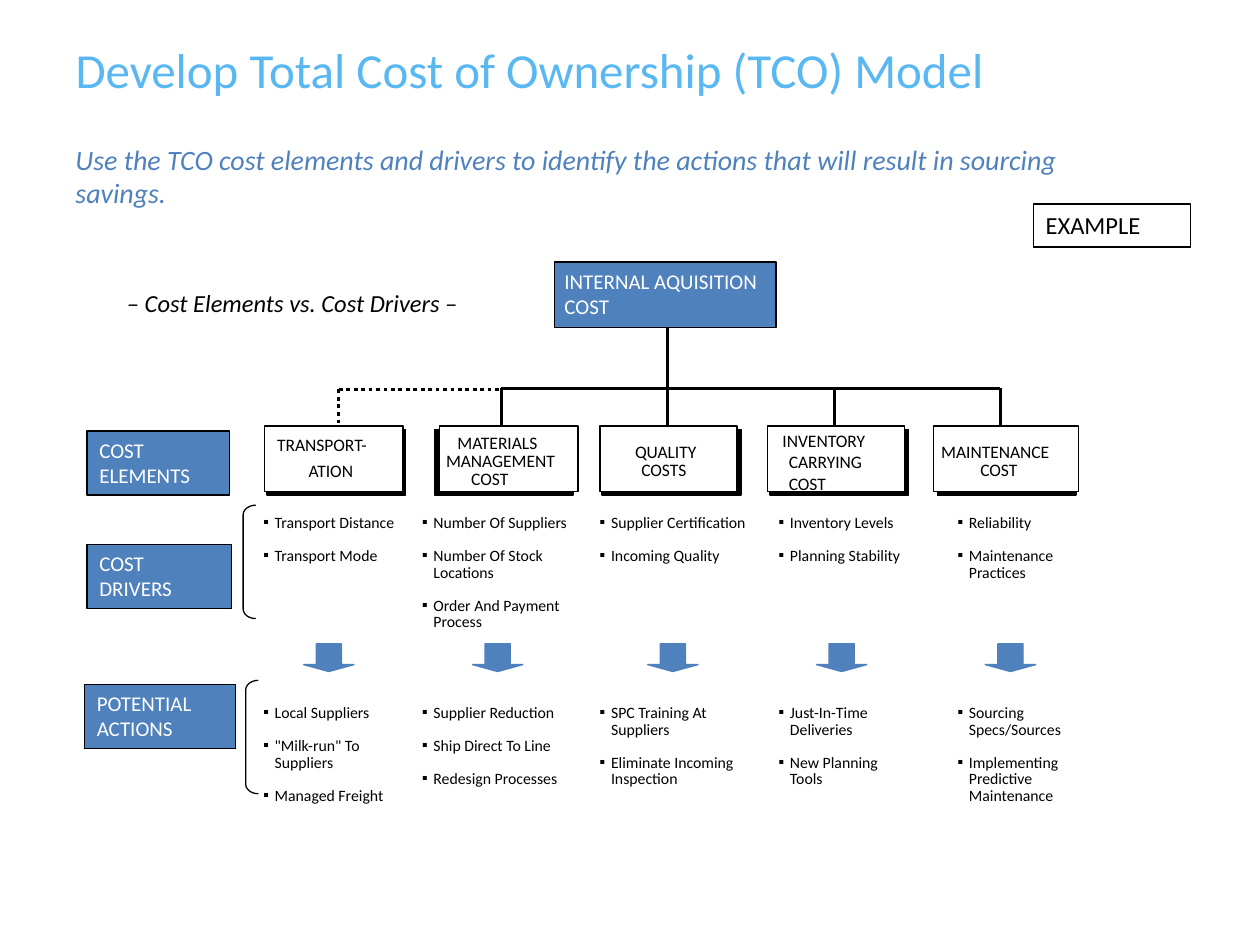
from dataclasses import dataclass
from lxml import etree
from pptx import Presentation
from pptx.dml.color import RGBColor
from pptx.enum.shapes import MSO_CONNECTOR, MSO_SHAPE
from pptx.enum.text import MSO_ANCHOR, MSO_AUTO_SIZE, PP_ALIGN
from pptx.oxml.ns import qn
from pptx.util import Inches, Pt

FONT = "Calibri"
COLORS = {"title": "59B7F2", "blue": "4F81BD", "black": "000000", "white": "FFFFFF"}


@dataclass
class CostElement:
    heading: list        # (line, indent in inches)
    heading_top: float   # top inset in inches
    heading_pitch: float  # line spacing in points
    left: float
    width: float
    list_left: float
    arrow_left: float
    drivers: list
    actions: list


ELEMENTS = [
    CostElement([("TRANSPORT-", 0.1), ("ATION", 0.35)], 0.02, 15.1,
                2.10, 1.10, 2.09, 2.41,
                ["Transport Distance", "Transport Mode"],
                ["Local Suppliers", '"Milk-run" To\vSuppliers', "Managed Freight"]),
    CostElement([("MATERIALS", 0.14), ("MANAGEMENT", 0.05), ("COST", 0.25)], 0.07, 10.4,
                3.49, 1.10, 3.35, 3.75,
                ["Number Of Suppliers", "Number Of Stock\vLocations",
                 "Order And Payment\vProcess"],
                ["Supplier Reduction", "Ship Direct To Line", "Redesign Processes"]),
    CostElement([("QUALITY", 0.28), ("COSTS", 0.33)], 0.14, 10.4,
                4.76, 1.09, 4.76, 5.14,
                ["Supplier Certification", "Incoming Quality"],
                ["SPC Training At\vSuppliers", "Eliminate Incoming\vInspection"]),
    CostElement([("INVENTORY", 0.12), ("CARRYING", 0.17), ("COST", 0.17)], 0.03, 12.2,
                6.09, 1.09, 6.18, 6.48,
                ["Inventory Levels", "Planning Stability"],
                ["Just-In-Time\vDeliveries", "New Planning\vTools"]),
    CostElement([("MAINTENANCE", 0.06), ("COST", 0.37)], 0.14, 10.4,
                7.41, 1.15, 7.60, 7.82,
                ["Reliability", "Maintenance\vPractices"],
                ["Sourcing\vSpecs/Sources", "Implementing\vPredictive\vMaintenance"]),
]


def rgb(name):
    return RGBColor.from_string(COLORS[name])


def write(shape, paragraphs, size, color, italic=False, insets=(0.1, 0.05, 0.1, 0.05),
          anchor=MSO_ANCHOR.TOP):
    """Fill a shape with left-aligned paragraphs and return them."""
    frame = shape.text_frame
    frame.text = "\n".join(paragraphs)
    frame.word_wrap = True
    frame.auto_size = MSO_AUTO_SIZE.NONE
    frame.vertical_anchor = anchor
    (frame.margin_left, frame.margin_top,
     frame.margin_right, frame.margin_bottom) = map(Inches, insets)
    for paragraph in frame.paragraphs:
        paragraph.alignment = PP_ALIGN.LEFT
        for run in paragraph.runs:
            run.font.name = FONT
            run.font.size = Pt(size)
            run.font.italic = italic
            run.font.color.rgb = rgb(color)
    return frame.paragraphs


def add_text(slide, box, paragraphs, size, color, **options):
    textbox = slide.shapes.add_textbox(*map(Inches, box))
    return write(textbox, paragraphs, size, color, **options)


def add_figure(slide, kind, box, fill, line="black", line_width=0.75):
    figure = slide.shapes.add_shape(kind, *map(Inches, box))
    figure.shadow.inherit = False
    if fill:
        figure.fill.solid()
        figure.fill.fore_color.rgb = rgb(fill)
    else:
        figure.fill.background()
    figure.line.color.rgb = rgb(line)
    figure.line.width = Pt(line_width)
    return figure


def add_line(slide, x1, y1, x2, y2):
    line = slide.shapes.add_connector(MSO_CONNECTOR.STRAIGHT, *map(Inches, (x1, y1, x2, y2)))
    line.line.color.rgb = rgb("black")
    line.line.width = Pt(1.75)
    etree.SubElement(line._element.spPr, qn("a:effectLst"))


def add_header(slide):
    title = slide.shapes.title
    title.left, title.top, title.width, title.height = map(Inches, (0.5, 0.05, 8.92, 0.78))
    write(title, ["Develop Total Cost of Ownership (TCO) Model"], 28, "title",
          anchor=MSO_ANCHOR.BOTTOM)
    add_text(slide, (0.5, 1.08, 8.65, 0.53),
             ["Use the TCO cost elements and drivers to identify the actions "
              "that will result in sourcing savings."], 16, "blue", italic=True)
    add_text(slide, (0.91, 2.24, 3.03, 0.57),
             ["– Cost Elements vs. Cost Drivers –"], 14, "black", italic=True)
    example = add_figure(slide, MSO_SHAPE.RECTANGLE, (8.2, 1.62, 1.25, 0.34), "white")
    write(example, ["EXAMPLE"], 14, "black")


def add_dashed_branch(slide, left, right, top, bottom):
    """Separate dashes, spread evenly along a corner."""
    dash, across, down = 0.03, 22, 6
    for i in range(across):
        x = left + i * (right - dash - left) / (across - 1)
        add_line(slide, x, top, x + dash, top)
    for i in range(down):
        y = top + i * (bottom - dash - top) / (down - 1)
        add_line(slide, left, y, left, y + dash)


def add_tree(slide, trunk_x, top, bus_y, bottom, step):
    """Trunk, bus and drops; the first branch is dashed."""
    first_solid, last = trunk_x - step, trunk_x + 2 * step
    add_line(slide, trunk_x, top, trunk_x, bus_y)
    add_line(slide, first_solid, bus_y, last, bus_y)
    for i in range(4):
        x = first_solid + i * step
        add_line(slide, x, bus_y, x, bottom)
    add_dashed_branch(slide, 2.69, 3.96, bus_y + 0.01, 3.42)


def add_heading(slide, element, shadow_left, top, height):
    add_figure(slide, MSO_SHAPE.RECTANGLE, (shadow_left, top + 0.03, 1.1, height),
               "black", line_width=0.88)
    card = add_figure(slide, MSO_SHAPE.RECTANGLE, (element.left, top, element.width, height),
                      "white", line_width=0.88)
    lines = write(card, [line for line, _ in element.heading], 10, "black",
                  insets=(0, element.heading_top, 0, 0))
    for paragraph, (_, indent) in zip(lines, element.heading):
        paragraph.line_spacing = Pt(element.heading_pitch)
        paragraph._p.get_or_add_pPr().set("marL", str(Inches(indent)))


def add_bullets(slide, items, left, top):
    paragraphs = add_text(slide, (left, top, 1.4, 0.95), items, 9, "black",
                          insets=(0, 0.02, 0, 0))
    for i, paragraph in enumerate(paragraphs):
        paragraph.line_spacing = Pt(9.4)
        paragraph.space_before = Pt(9.4 if i else 0)
        properties = paragraph._p.get_or_add_pPr()
        properties.set("marL", str(Inches(0.09)))
        properties.set("indent", str(-Inches(0.09)))
        etree.SubElement(properties, qn("a:buFont")).set("typeface", FONT)
        etree.SubElement(properties, qn("a:buChar")).set("char", "▪")


def add_row_labels(slide):
    labels = [("COST ELEMENTS", 0.69, 3.42, 1.13),
              ("COST DRIVERS", 0.69, 4.32, 1.15),
              ("POTENTIAL ACTIONS", 0.67, 5.43, 1.2)]
    for label, left, top, width in labels:
        box = add_figure(slide, MSO_SHAPE.RECTANGLE, (left, top, width, 0.51), "blue")
        write(box, [label], 12, "white")
    for left, top in [(1.93, 4.01), (1.95, 5.4)]:
        bracket = add_figure(slide, MSO_SHAPE.LEFT_BRACKET, (left, top, 0.1, 0.9), None)
        bracket.adjustments[0] = 0.77


def add_cost_model(slide):
    root = add_figure(slide, MSO_SHAPE.RECTANGLE, (4.4, 2.08, 1.76, 0.52), "blue",
                      line_width=0.88)
    write(root, ["INTERNAL AQUISITION COST"], 12, "white", insets=(0.08, 0.05, 0.06, 0))
    add_tree(slide, 5.3, 2.6, 3.08, 3.56, 1.32)
    for i, element in enumerate(ELEMENTS):
        add_heading(slide, element, 2.12 + 1.33 * i, 3.38, 0.52)
        add_bullets(slide, element.drivers, element.list_left, 4.07)
        add_figure(slide, MSO_SHAPE.DOWN_ARROW, (element.arrow_left, 5.11, 0.4, 0.22),
                   "blue", line="blue").adjustments[1] = 0.25
        add_bullets(slide, element.actions, element.list_left, 5.58)
    add_row_labels(slide)


def main():
    deck = Presentation()
    deck.slide_width, deck.slide_height = Inches(10), Inches(7.5)
    slide = deck.slides.add_slide(deck.slide_layouts[5])
    add_header(slide)
    add_cost_model(slide)
    deck.save("out.pptx")


if __name__ == "__main__":
    main()
